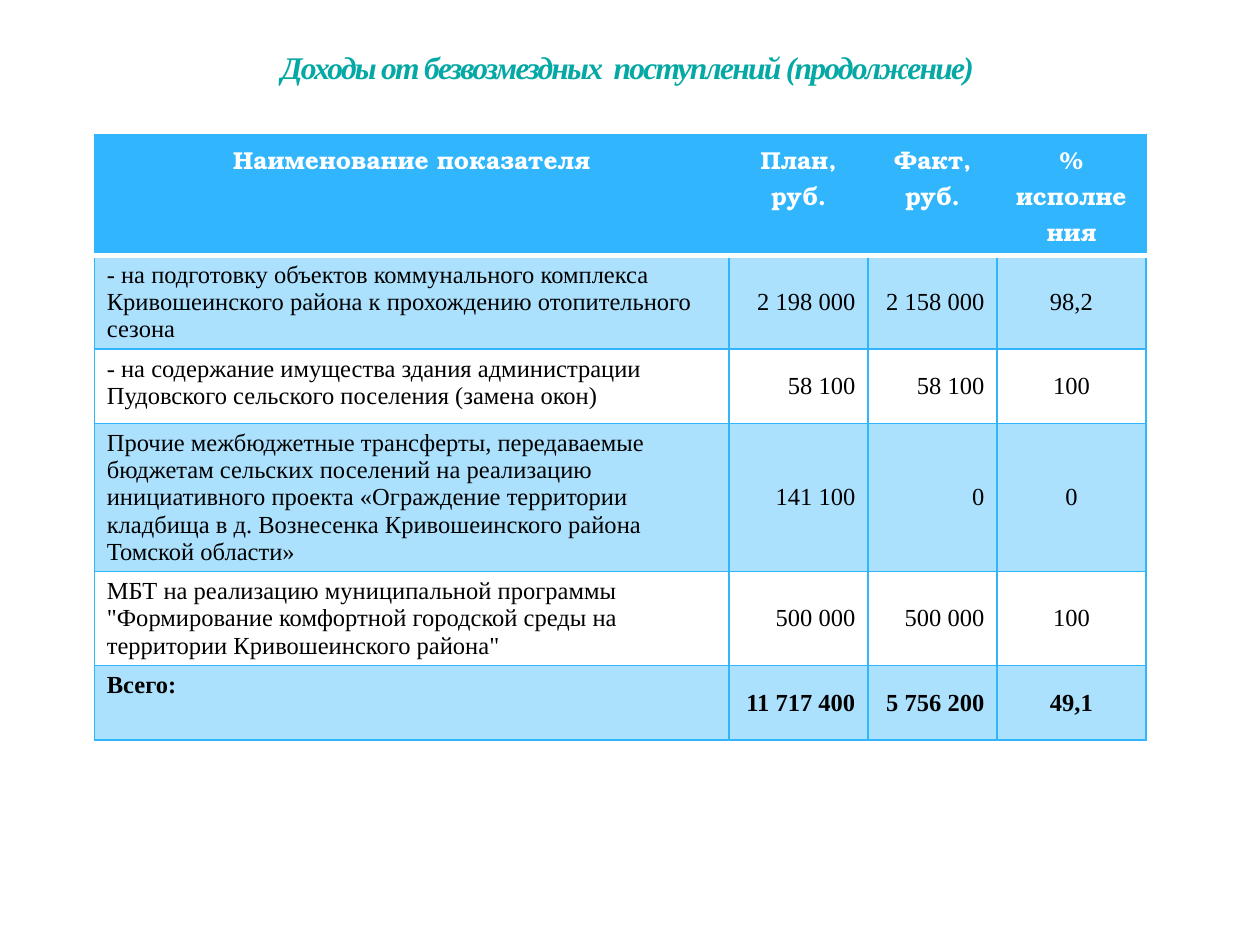
from lxml import etree
from pptx import Presentation
from pptx.dml.color import RGBColor
from pptx.enum.text import MSO_ANCHOR, PP_ALIGN
from pptx.oxml.ns import qn
from pptx.util import Cm, Pt

LEFT, CENTER, RIGHT = PP_ALIGN.LEFT, PP_ALIGN.CENTER, PP_ALIGN.RIGHT
TOP, MIDDLE = MSO_ANCHOR.TOP, MSO_ANCHOR.MIDDLE
BLUE, WHITE, BLACK, TEAL = "31B6FD", "FFFFFF", "000000", "04A8A4"
SERIF, HEAD_FONT = "Times New Roman", "TeX Gyre Bonum"
COLUMN_WIDTHS = (12.8, 2.8, 2.6, 3)
ALIGNMENTS = (LEFT, RIGHT, RIGHT, CENTER)
HEADER_HEIGHT, ROW_HEIGHT = 2.11, 1.5
ROWS = [
    ("Наименование показателя", "План, руб.", "Факт, руб.", "% исполнения"),
    ("- на подготовку объектов коммунального комплекса Кривошеинского района "
     "к прохождению отопительного сезона", "2 198 000", "2 158 000", "98,2"),
    ("- на содержание имущества здания администрации Пудовского сельского "
     "поселения (замена окон)", "58 100", "58 100", "100"),
    ("Прочие межбюджетные трансферты, передаваемые бюджетам сельских поселений "
     "на реализацию инициативного проекта «Ограждение территории кладбища "
     "в д. Вознесенка Кривошеинского района Томской области»", "141 100", "0", "0"),
    ("МБТ на реализацию муниципальной программы \"Формирование комфортной "
     "городской среды на территории Кривошеинского района\"",
     "500 000", "500 000", "100"),
    ("Всего:", "11 717 400", "5 756 200", "49,1"),
]


def rgb(value):
    """Turn a hex string into a colour."""
    return RGBColor.from_string(value)


def write(tf, text, align, color, **font):
    """Write one formatted run into a text frame and return it."""
    p = tf.paragraphs[0]
    p.alignment = align
    r = p.add_run()
    r.text = text
    r.font.color.rgb = rgb(color)
    for name, value in font.items():
        setattr(r.font, name, value)
    return r


def add_title(s, text):
    """Add the slide title with tightened letter spacing."""
    tf = s.shapes.add_textbox(Cm(2.9), 0, Cm(19.5), Cm(1.48)).text_frame
    frame = {"word_wrap": True, "vertical_anchor": TOP,
             "margin_top": Cm(1.17), "margin_bottom": 0}
    for name, value in frame.items():
        setattr(tf, name, value)
    r = write(tf, text, CENTER, TEAL, name=SERIF, size=Pt(18), bold=True, italic=True)
    r.font._element.set("spc", "-100")


def add_border(cell, side, color, width):
    """Draw one side of a cell border."""
    ln = etree.SubElement(cell._tc.get_or_add_tcPr(), qn(f"a:ln{side}"), w=str(Pt(width)))
    fill = etree.SubElement(ln, qn("a:solidFill"))
    etree.SubElement(fill, qn("a:srgbClr"), val=color)


def fill_cell(cell, row):
    """Fill the header solid, odd rows translucent and even rows not at all."""
    if row and row % 2 == 0:
        cell.fill.background()
        return
    cell.fill.solid()
    cell.fill.fore_color.rgb = rgb(BLUE)
    if row:
        color = cell._tc.tcPr.find(f"{qn('a:solidFill')}/{qn('a:srgbClr')}")
        etree.SubElement(color, qn("a:alpha"), val="40000")


def format_cell(cell, row, col, text):
    """Write, border and fill one table cell."""
    header, total = row == 0, row == len(ROWS) - 1
    cell.vertical_anchor = TOP if header or col == 0 else MIDDLE
    write(cell.text_frame, text, CENTER if header else ALIGNMENTS[col],
          WHITE if header else BLACK, name=HEAD_FONT if header else SERIF,
          size=Pt(14), bold=header or total)
    rule, thin = (WHITE, 3), (BLUE, 1)
    borders = {"L": thin, "R": thin, "T": rule if row == 1 else thin,
               "B": rule if header else thin}
    for side, (color, width) in borders.items():
        add_border(cell, side, color, width)
    fill_cell(cell, row)


def add_income_table(s):
    """Add the table of planned and actual income."""
    heights = [HEADER_HEIGHT] + [ROW_HEIGHT] * (len(ROWS) - 1)
    table = s.shapes.add_table(len(ROWS), len(COLUMN_WIDTHS), Cm(1.9), Cm(2.72),
                               Cm(sum(COLUMN_WIDTHS)), Cm(sum(heights))).table
    for column, width in zip(table.columns, COLUMN_WIDTHS):
        column.width = Cm(width)
    for i, (height, texts) in enumerate(zip(heights, ROWS)):
        table.rows[i].height = Cm(height)
        for j, text in enumerate(texts):
            format_cell(table.cell(i, j), i, j, text)


def main():
    """Build and save the slide."""
    prs = Presentation()
    prs.slide_width, prs.slide_height = Cm(25.4), Cm(19.05)
    s = prs.slides.add_slide(prs.slide_layouts[6])
    add_income_table(s)
    add_title(s, "Доходы от безвозмездных  поступлений (продолжение)")
    prs.save("out.pptx")


if __name__ == "__main__":
    main()
